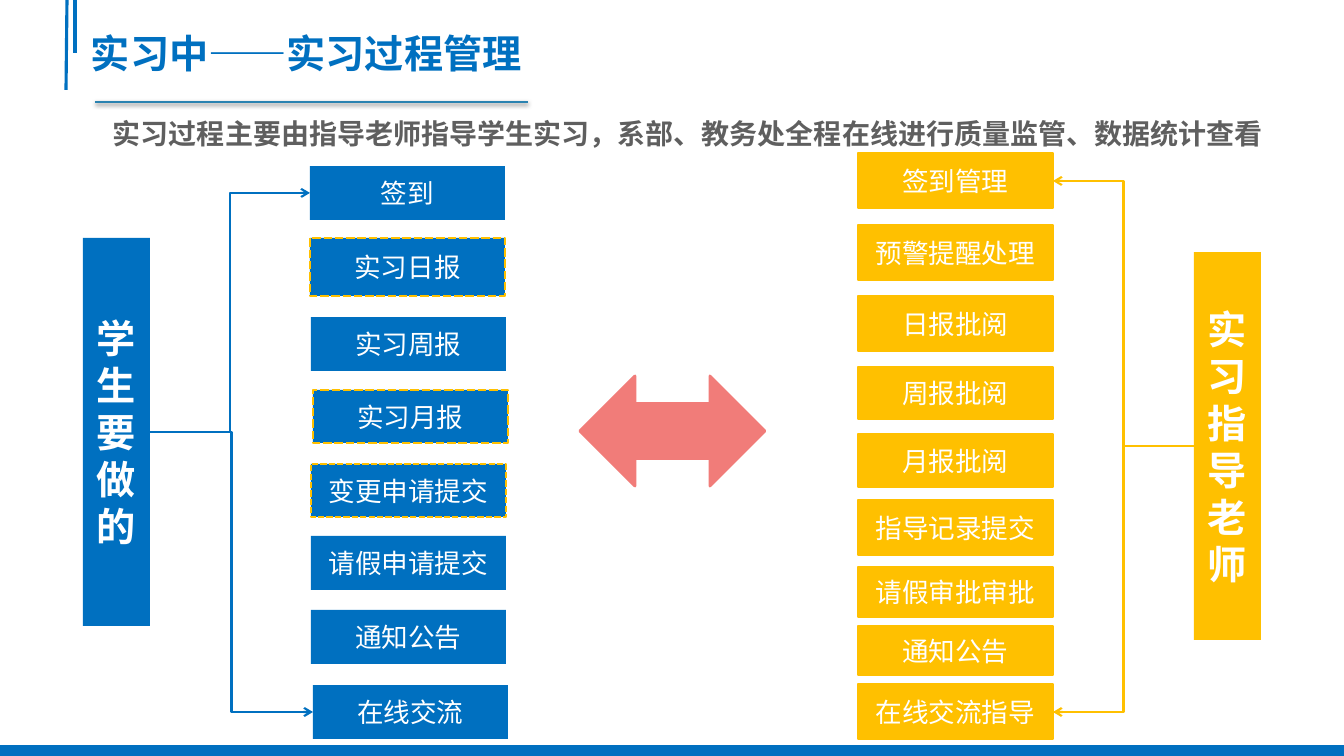
from lxml import etree
from pptx import Presentation
from pptx.dml.color import RGBColor
from pptx.enum.dml import MSO_LINE
from pptx.enum.shapes import MSO_CONNECTOR, MSO_SHAPE
from pptx.enum.text import MSO_ANCHOR, PP_ALIGN
from pptx.oxml import parse_xml
from pptx.oxml.ns import nsdecls, qn
from pptx.util import Pt

BLUE = RGBColor(0x00, 0x70, 0xC0)
TEAL = RGBColor(0x2A, 0x82, 0xB0)
AMBER = RGBColor(0xFF, 0xC0, 0x00)
CORAL = RGBColor(0xF1, 0x7C, 0x79)
GREY = RGBColor(0x5F, 0x5F, 0x5F)
WHITE = RGBColor(0xFF, 0xFF, 0xFF)

RECT, DOUBLE_ARROW = MSO_SHAPE.RECTANGLE, MSO_SHAPE.LEFT_RIGHT_ARROW
STRAIGHT, ELBOW = MSO_CONNECTOR.STRAIGHT, MSO_CONNECTOR.ELBOW
LEFT, CENTER = PP_ALIGN.LEFT, PP_ALIGN.CENTER
TOP, MIDDLE = MSO_ANCHOR.TOP, MSO_ANCHOR.MIDDLE
DASH = MSO_LINE.SQUARE_DOT

HEAD_FONT, BODY_FONT = "Noto Sans CJK SC", "DejaVu Sans"
PX_PER_INCH = 100.8
BOX_W = 195
TEACHER_X = 858

# text, left, top, height, width of the dashed border in points
STUDENT_TASKS = [
    ("签到", 310, 166, 54, 0),
    ("实习日报", 310, 238, 58, 2),
    ("实习周报", 311, 317, 54, 0),
    ("实习月报", 313, 390, 53, 2),
    ("变更申请提交", 311, 464, 53, 1.5),
    ("请假申请提交", 311, 536, 54, 0),
    ("通知公告", 311, 610, 54, 0),
    ("在线交流", 313, 685, 54, 0),
]
# text, top, height
TEACHER_TASKS = [
    ("签到管理", 153, 55),
    ("预警提醒处理", 225, 55),
    ("日报批阅", 296, 55),
    ("周报批阅", 367, 52),
    ("月报批阅", 434, 53),
    ("指导记录提交", 500, 55),
    ("请假审批审批", 567, 50),
    ("通知公告", 626, 49),
    ("在线交流指导", 684, 55),
]


def px(n):
    return round(n * 914400 / PX_PER_INCH)


def write(s, text, size=19, font=BODY_FONT, color=WHITE, bold=False,
          align=CENTER, anchor=MIDDLE, spacing=None):
    tf = s.text_frame
    tf.word_wrap = True
    tf.vertical_anchor = anchor
    p = tf.paragraphs[0]
    p.alignment = align
    if spacing:
        p.line_spacing = spacing
    r = p.add_run()
    r.text = text
    r.font.size, r.font.bold, r.font.name = Pt(size), bold, font
    r.font.color.rgb = color
    etree.SubElement(r.font._element, qn("a:ea"), typeface=font)
    return tf


class Board:
    def __init__(self, prs):
        self.slide = prs.slides.add_slide(prs.slide_layouts[6])
        self.shapes = self.slide.shapes

    def shape(self, x, y, w, h, fill, kind=RECT, border=None, width=0, dash=None):
        s = self.shapes.add_shape(kind, px(x), px(y), px(w), px(h))
        s.shadow.inherit = False
        s.fill.solid()
        s.fill.fore_color.rgb = fill
        if width:
            s.line.color.rgb = border
            s.line.width = Pt(width)
            s.line.dash_style = dash
        else:
            s.line.fill.background()
        return s

    def text(self, x, y, w, h, text, **style):
        s = self.shapes.add_textbox(px(x), px(y), px(w), px(h))
        return write(s, text, **style)

    def line(self, x1, y1, x2, y2, color, width, kind=STRAIGHT, arrow=False, shadow=False):
        s = self.shapes.add_connector(kind, px(x1), px(y1), px(x2), px(y2))
        s.line.color.rgb = color
        s.line.width = Pt(width)
        if arrow:
            etree.SubElement(s.line._get_or_add_ln(), qn("a:tailEnd"), type="arrow")
        soft = (f'<a:outerShdw blurRad="{Pt(3.1)}" dist="{Pt(1.6)}" dir="5400000">'
                '<a:srgbClr val="000000"><a:alpha val="38000"/></a:srgbClr></a:outerShdw>')
        s._element.spPr.append(parse_xml(
            f'<a:effectLst {nsdecls("a")}>{soft if shadow else ""}</a:effectLst>'))


def main():
    prs = Presentation()
    prs.slide_width, prs.slide_height = px(1344), px(756)
    b = Board(prs)

    tf = b.text(69, 28, 1210, 85, "实习中——实习过程管理", size=28, font=HEAD_FONT,
                color=BLUE, bold=True, align=LEFT, anchor=TOP, spacing=0.9)
    tf.margin_left, tf.margin_top = px(22), px(7)
    b.line(67, 0, 66, 90, BLUE, 2.25)
    b.line(75, 0, 75, 53, BLUE, 2.25)
    b.line(95, 102, 528, 102, TEAL, 2, shadow=True)
    b.shape(0, 745, 1344, 11, BLUE)
    b.text(66, 112, 1244, 44, "实习过程主要由指导老师指导学生实习，系部、教务处全程在线进行质量监管、数据统计查看",
           size=20, font=HEAD_FONT, color=GREY, bold=True, anchor=TOP)

    for text, x, y, h, width in STUDENT_TASKS:
        write(b.shape(x, y, BOX_W, h, BLUE, border=AMBER, width=width, dash=DASH), text)
    for text, y, h in TEACHER_TASKS:
        write(b.shape(TEACHER_X, y, BOX_W, h, AMBER, border=AMBER, width=2), text)

    for text, x, y, color in [("学生要做的", 83, 238, BLUE), ("实习指导老师", 1194, 252, AMBER)]:
        write(b.shape(x, y, 67, 388, color), text, size=28, bold=True)

    for x, y in [(310, 193), (313, 712)]:
        b.line(150, 432, x, y, BLUE, 1.5, kind=ELBOW, arrow=True)
    for y in (181, 712):
        b.line(1194, 446, TEACHER_X + BOX_W, y, AMBER, 1.5, kind=ELBOW, arrow=True)

    b.shape(580, 376, 185, 110, CORAL, kind=DOUBLE_ARROW, border=CORAL, width=2)
    prs.save("out.pptx")


if __name__ == "__main__":
    main()
